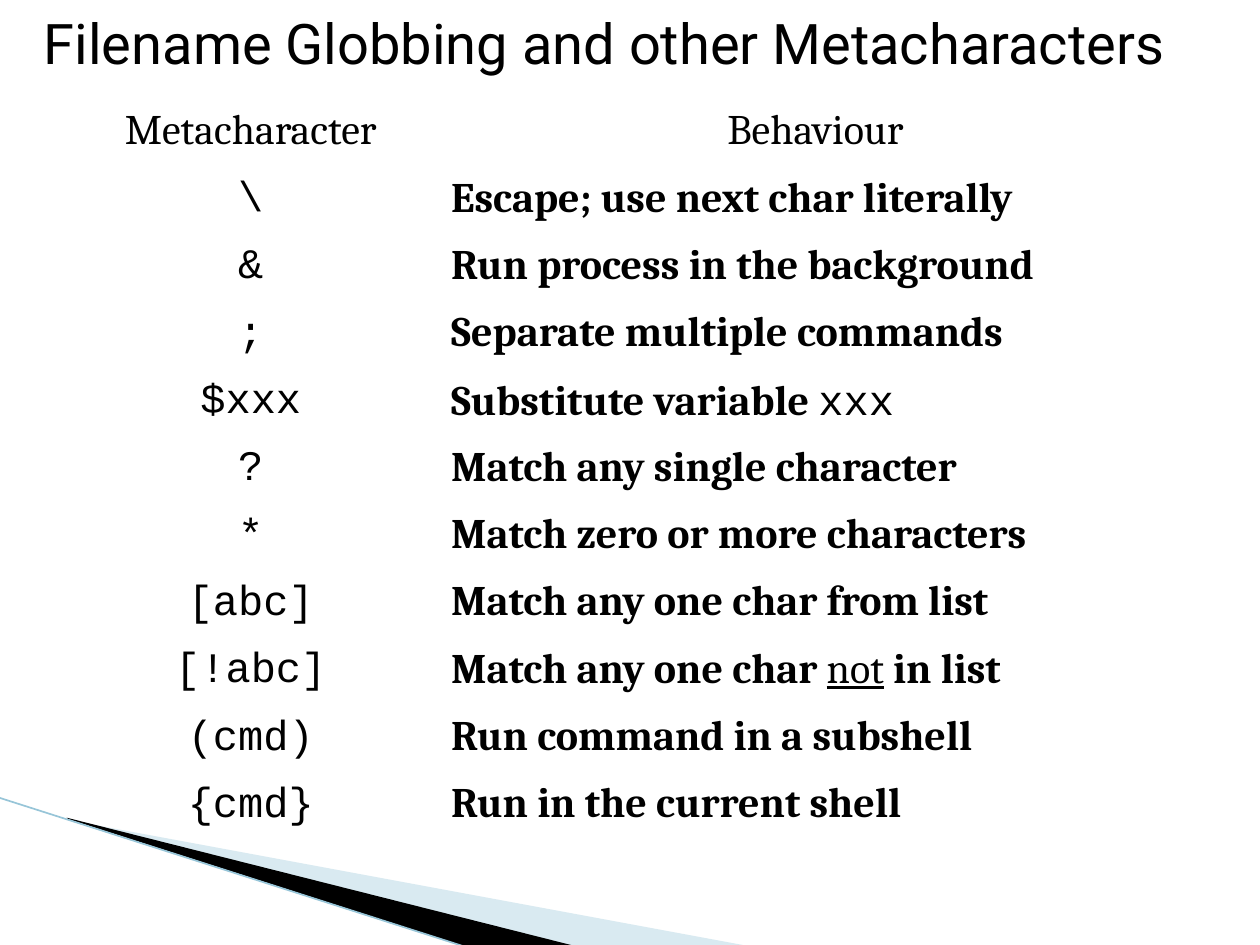
from lxml.etree import SubElement
from pptx import Presentation
from pptx.dml.color import RGBColor
from pptx.enum.shapes import MSO_CONNECTOR
from pptx.enum.text import PP_ALIGN
from pptx.oxml.ns import qn
from pptx.util import Inches, Pt

TITLE = "Filename Globbing and other Metacharacters"
HEADINGS = ("Metacharacter", " Behaviour")
BOLD, CODE, UNDERLINED = "bold", "code", "underlined"
# Each behaviour is a list of (text, style) parts
METACHARACTERS = [
    ("\\", [("Escape; use next char literally", BOLD)]),
    ("&", [("Run process in the background", BOLD)]),
    (";", [("Separate multiple commands", BOLD)]),
    ("$xxx", [("Substitute variable ", BOLD), ("xxx", CODE)]),
    ("?", [("Match any single character", BOLD)]),
    ("*", [("Match zero or more characters", BOLD)]),
    ("[abc]", [("Match any one char from list", BOLD)]),
    ("[!abc]", [("Match any one char ", BOLD), ("not", UNDERLINED), (" in list", BOLD)]),
    ("(cmd)", [("Run command in a subshell", BOLD)]),
    ("{cmd}", [("Run in the current shell", BOLD)]),
]
TITLE_FONT, BODY_FONT, CODE_FONT = "Roboto", "Cambria", "Courier New"
BLACK, PALE_BLUE, LINE_BLUE = "000000", "A0CBDC", "97C5D8"
COLUMN_WIDTHS = (2.98, 5.91)
ROW_HEIGHT = 0.53
NO_TABLE_STYLE = "{2D5ABB26-0587-4C30-8999-92F81FD0307C}"
PALE_WEDGE = [(0.55, 6.51), (5.95, 7.51), (4.56, 7.51), (0.55, 6.5)]
BLACK_WEDGE = [(0.53, 6.49), (4.57, 7.51), (3.72, 7.52), (0.54, 6.5)]


def rgb(color):
    return RGBColor.from_string(color)


def set_font(font, name, size):
    font.name, font.size = name, Pt(size)
    font.color.rgb = rgb(BLACK)


def add_wedge(shapes, corners, color, opacity=None):
    points = [(Inches(x), Inches(y)) for x, y in corners]
    builder = shapes.build_freeform(*points[0])
    builder.add_line_segments(points[1:])
    wedge = builder.convert_to_shape()
    wedge.shadow.inherit = False
    wedge.line.fill.background()
    wedge.fill.solid()
    wedge.fill.fore_color.rgb = rgb(color)
    if opacity is not None:
        fill_color = wedge._element.spPr.find(".//" + qn("a:srgbClr"))
        SubElement(fill_color, qn("a:alpha"), val=str(opacity * 1000))


def add_edge_line(shapes):
    edge = shapes.add_connector(MSO_CONNECTOR.STRAIGHT, Inches(-0.01), Inches(6.33),
                                Inches(3.71), Inches(7.52))
    edge.line.color.rgb = rgb(LINE_BLUE)
    edge.line.width = Pt(0.95)
    SubElement(edge._element.spPr, qn("a:effectLst"))


def add_title(shapes):
    title = shapes.add_textbox(Inches(0.25), Inches(0.02), Inches(9.5), Inches(0.62))
    title.text_frame.word_wrap = True
    paragraph = title.text_frame.paragraphs[0]
    paragraph.text = TITLE
    set_font(paragraph.font, TITLE_FONT, 32)


def fill_cell(cell, parts, align, font_name):
    cell.fill.background()
    cell.margin_left = cell.margin_right = Inches(0.1)
    cell.margin_top, cell.margin_bottom = Inches(0.12), Inches(0.05)
    paragraph = cell.text_frame.paragraphs[0]
    paragraph.alignment = align
    paragraph.line_spacing = 0.91
    paragraph.space_after = Pt(14.2)
    set_font(paragraph.font, font_name, 24)
    for text, style in parts:
        run = paragraph.add_run()
        run.text = text
        if style == BOLD:
            run.font.bold = True
        elif style == UNDERLINED:
            run.font.underline = True
        elif style == CODE:
            run.font.name = CODE_FONT


def add_metacharacter_table(shapes):
    row_count = len(METACHARACTERS) + 1
    table = shapes.add_table(row_count, len(COLUMN_WIDTHS), Inches(0.5), Inches(0.75),
                             Inches(sum(COLUMN_WIDTHS)), Inches(ROW_HEIGHT * row_count)).table
    table.first_row = table.horz_banding = False
    table._tbl.tblPr.find(qn("a:tableStyleId")).text = NO_TABLE_STYLE
    for column, width in zip(table.columns, COLUMN_WIDTHS):
        column.width = Inches(width)
    for row in table.rows:
        row.height = Inches(ROW_HEIGHT)
    for column, heading in enumerate(HEADINGS):
        fill_cell(table.cell(0, column), [(heading, None)], PP_ALIGN.CENTER, BODY_FONT)
    for row, (symbol, behaviour) in enumerate(METACHARACTERS, start=1):
        fill_cell(table.cell(row, 0), [(symbol, None)], PP_ALIGN.CENTER, CODE_FONT)
        fill_cell(table.cell(row, 1), behaviour, PP_ALIGN.LEFT, BODY_FONT)


def main():
    deck = Presentation()
    deck.slide_width, deck.slide_height = Inches(10), Inches(7.5)
    shapes = deck.slides.add_slide(deck.slide_layouts[6]).shapes
    add_wedge(shapes, PALE_WEDGE, PALE_BLUE, opacity=40)
    add_wedge(shapes, BLACK_WEDGE, BLACK)
    add_edge_line(shapes)
    add_title(shapes)
    add_metacharacter_table(shapes)
    deck.save("out.pptx")


if __name__ == "__main__":
    main()
